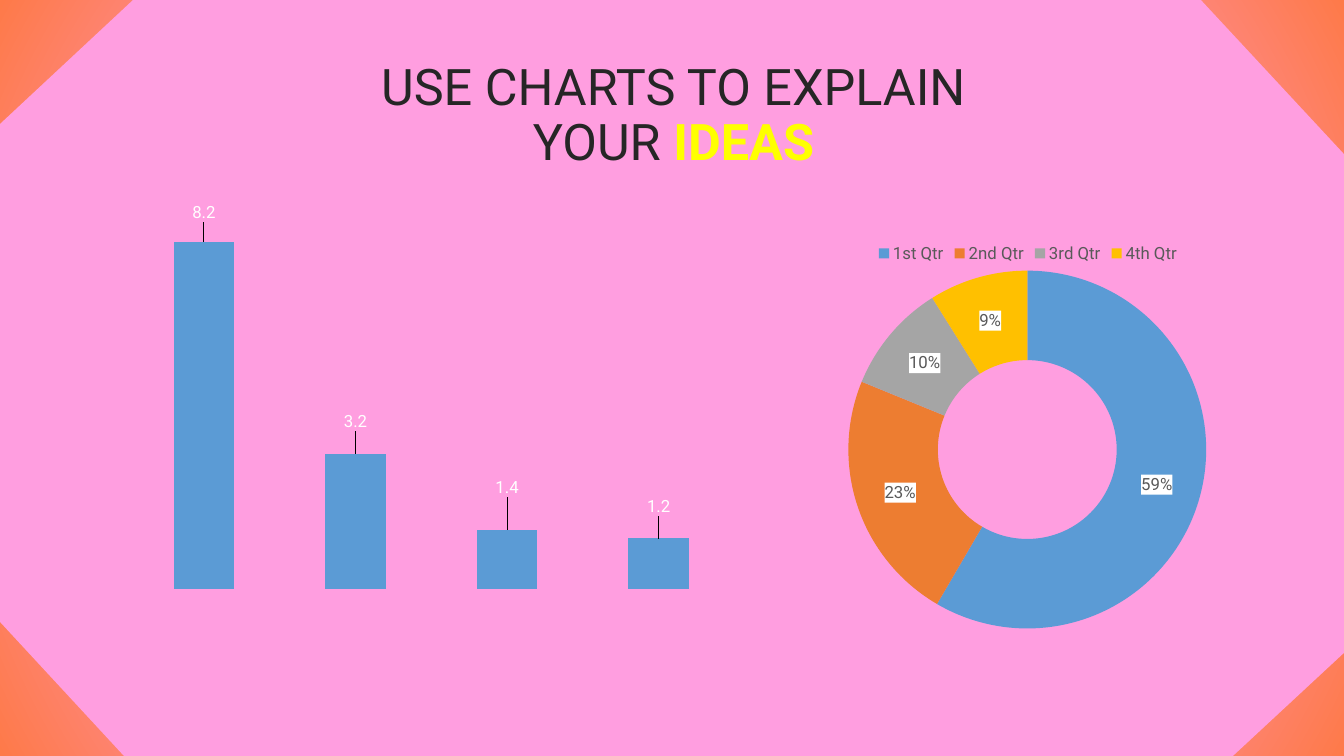
from lxml import etree
from pptx import Presentation
from pptx.chart.data import CategoryChartData
from pptx.dml.color import RGBColor
from pptx.enum.chart import XL_CHART_TYPE, XL_LABEL_POSITION, XL_LEGEND_POSITION
from pptx.enum.text import MSO_ANCHOR, MSO_AUTO_SIZE, PP_ALIGN
from pptx.oxml import parse_xml
from pptx.oxml.ns import nsdecls, qn
from pptx.util import Pt

BARS = XL_CHART_TYPE.COLUMN_CLUSTERED
RING = XL_CHART_TYPE.DOUGHNUT
ABOVE = XL_LABEL_POSITION.OUTSIDE_END
TOP = XL_LEGEND_POSITION.TOP
CENTER = PP_ALIGN.CENTER
BOTTOM = MSO_ANCHOR.BOTTOM
NO_FIT = MSO_AUTO_SIZE.NONE

FACE = "Roboto"
PINK = "FF9EE0"
CORAL = "FE7A49"
BLUE = "5B9BD5"
WIDE, HIGH = 1344, 756
PANEL = [(133, 0), (1201, 0), (1344, 154), (1344, 653),
         (1233, 756), (124, 756), (0, 622), (0, 124)]
LIFTS = [-16, -18, -28, -18]


def px(n):
    return round(n * 914400 / 100.8)


def rgb(code):
    return RGBColor.from_string(code)


def style(font, size, color):
    font.name = FACE
    font.size = Pt(size)
    font.color.rgb = rgb(color)


def paint(item, color):
    item.fill.solid()
    item.fill.fore_color.rgb = rgb(color)


def add_glow(slide):
    fill = slide.background.fill
    fill.gradient()
    for stop, color, spot in zip(fill.gradient_stops, (PINK, CORAL), (0.46, 1)):
        stop.color.rgb = rgb(color)
        stop.position = spot
    grad = slide.element.find(".//" + qn("a:gradFill"))
    grad.remove(grad.find(qn("a:lin")))
    path = etree.SubElement(grad, qn("a:path"), path="circle")
    etree.SubElement(path, qn("a:fillToRect"), l="50000", t="50000", r="50000", b="50000")


def add_panel(slide):
    pen = slide.shapes.build_freeform(*PANEL[0], scale=px(1))
    pen.add_line_segments(PANEL[1:], close=True)
    panel = pen.convert_to_shape()
    panel.shadow.inherit = False
    paint(panel, PINK)
    panel.line.fill.background()


def add_title(slide, box, parts):
    title = slide.shapes.title
    slide.shapes.element.append(title.element)
    title.left, title.top, title.width, title.height = map(px, box)
    frame = title.text_frame
    frame.word_wrap = True
    frame.auto_size = NO_FIT
    frame.vertical_anchor = BOTTOM
    frame.margin_left = frame.margin_right = px(10)
    frame.margin_top = frame.margin_bottom = px(10)
    para = frame.paragraphs[0]
    para.alignment = CENTER
    para.line_spacing = 0.9
    para.font.name = FACE
    para.font.size = Pt(36)
    for text, color, bold in parts:
        run = para.add_run()
        run.text = text
        run.font.bold = bold
        run.font.color.rgb = rgb(color)


def make_spot(x, y, w=None, h=None):
    tags = [("xMode", "edge"), ("yMode", "edge")] if w else []
    tags += [("x", x), ("y", y)]
    tags += [("w", w), ("h", h)] if w else []
    if w:
        tags.insert(0, ("layoutTarget", "inner"))
    body = "".join(f'<c:{tag} val="{val}"/>' for tag, val in tags)
    return parse_xml(f'<c:layout {nsdecls("c")}><c:manualLayout>{body}</c:manualLayout></c:layout>')


def add_chart(slide, kind, box, cats, vals):
    data = CategoryChartData()
    data.categories = cats
    data.add_series("Series 1", vals)
    chart = slide.shapes.add_chart(kind, *map(px, box), data).chart
    chart.has_title = False
    chart.has_legend = False
    style(chart.font, 10, "000000")
    area = chart.element.find(".//" + qn("c:plotArea"))
    for old in area.findall(qn("c:layout")):
        area.remove(old)
    area.insert(0, make_spot(0.002, 0.096, 0.994, 0.888))
    return chart


def add_labels(plot, color):
    labels = plot.series[0].data_labels
    labels.show_value = True
    style(labels.font, 12, color)
    return labels


def add_bars(slide, box):
    chart = add_chart(slide, BARS, box, ["1", "2", "3", "4"], [8.2, 3.2, 1.4, 1.2])
    for axis in (chart.category_axis, chart.value_axis):
        axis.visible = False
        axis.has_major_gridlines = False
    chart.value_axis.minimum_scale = 0
    chart.value_axis.maximum_scale = 9
    plot = chart.plots[0]
    plot.gap_width = 150
    plot.vary_by_categories = False
    bars = plot.series[0]
    paint(bars.format, BLUE)
    add_labels(plot, "FFFFFF").position = ABOVE
    for i, lift in enumerate(LIFTS):
        label = bars.points[i].data_label
        style(label.font, 12, "FFFFFF")
        label.position = ABOVE
    for node, lift in zip(chart.element.iter(qn("c:dLbl")), LIFTS):
        node.insert(1, make_spot(0, round(lift / box[3], 3)))


def add_ring(slide, box):
    cats = ["1st Qtr", "2nd Qtr", "3rd Qtr", "4th Qtr"]
    chart = add_chart(slide, RING, box, cats, [59, 23, 10, 9])
    chart.has_legend = True
    chart.legend.position = TOP
    chart.legend.include_in_layout = False
    style(chart.legend.font, 12, "595959")
    plot = chart.plots[0]
    plot.vary_by_categories = True
    for i, color in enumerate((BLUE, "ED7D31", "A5A5A5", "FFC000")):
        part = plot.series[0].points[i].format
        paint(part, color)
        part.line.fill.background()
    labels = add_labels(plot, "595959")
    labels.number_format = '0"%"'
    labels.number_format_is_linked = False
    back = parse_xml(f'<c:spPr {nsdecls("c", "a")}><a:solidFill>'
                     '<a:srgbClr val="FFFFFF"/></a:solidFill></c:spPr>')
    chart.element.find(".//" + qn("c:dLbls") + "/" + qn("c:txPr")).addprevious(back)


def main():
    deck = Presentation()
    deck.slide_width, deck.slide_height = px(WIDE), px(HIGH)
    slide = deck.slides.add_slide(deck.slide_layouts[5])
    add_glow(slide)
    add_panel(slide)
    add_title(slide, (347, 44, 653, 137),
              [("USE CHARTS TO EXPLAIN YOUR ", "262626", False), ("IDEAS", "FFFF00", True)])
    add_bars(slide, (127, 167, 610, 429))
    add_ring(slide, (737, 232, 582, 403))
    deck.save("out.pptx")


if __name__ == "__main__":
    main()
